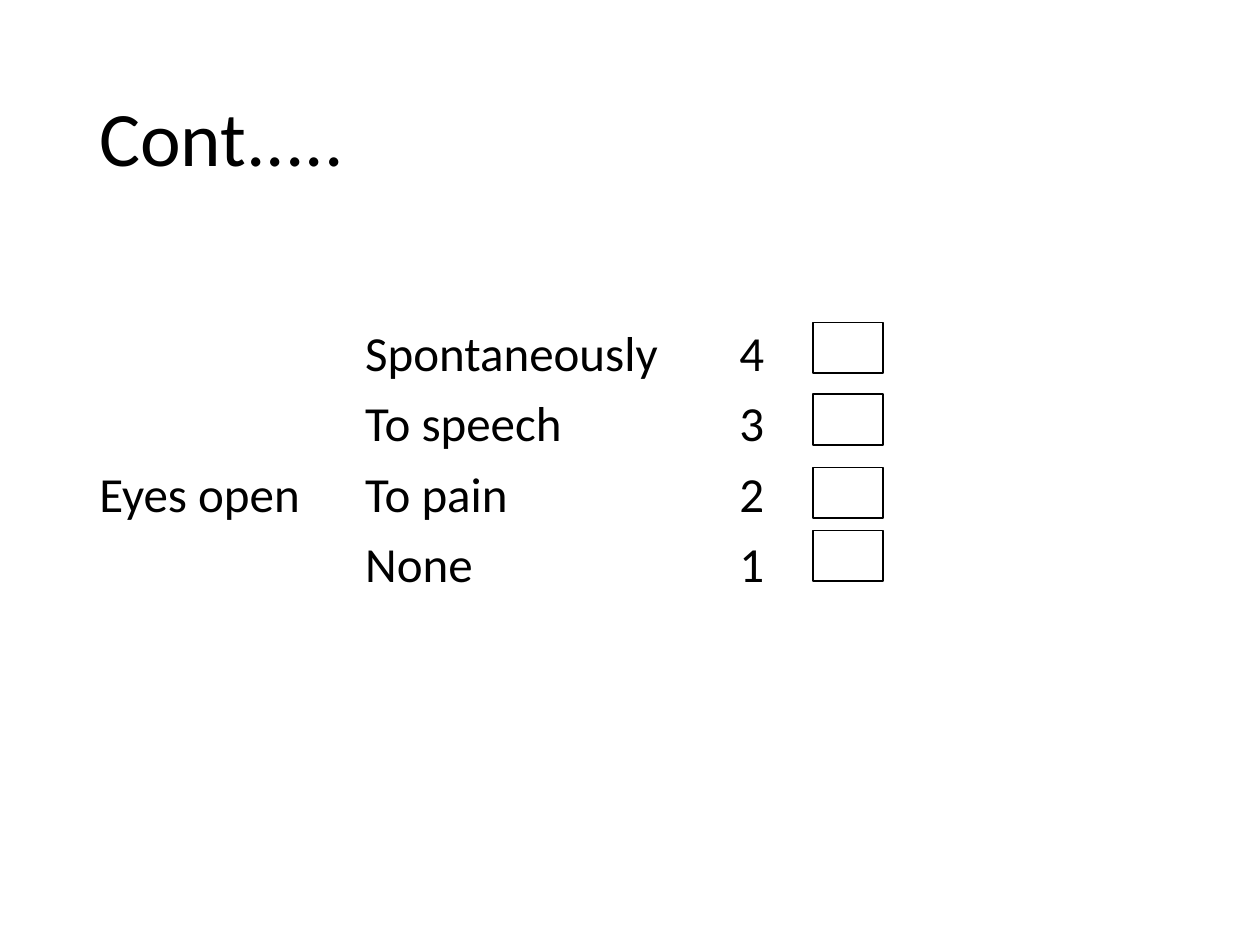
from lxml.etree import SubElement
from pptx import Presentation
from pptx.dml.color import RGBColor
from pptx.enum.shapes import MSO_SHAPE
from pptx.enum.text import MSO_ANCHOR
from pptx.oxml.ns import qn
from pptx.util import Inches, Pt


def color(value):
    return RGBColor.from_string(value)


def add_text(page, top, height, lines, size, frame_format, paragraph_format):
    box = page.shapes.add_textbox(Inches(0.69), Inches(top), Inches(8.62), Inches(height))
    frame = box.text_frame
    for name, value in frame_format.items():
        setattr(frame, name, value)
    for index, line in enumerate(lines):
        para = frame.add_paragraph() if index else frame.paragraphs[0]
        for name, value in paragraph_format.items():
            setattr(para, name, value)
        span = para.add_run()
        span.text = line
        for name, value in {"name": "Calibri", "size": Pt(size)}.items():
            setattr(span.font, name, value)
        span.font.color.rgb = color("000000")
    return box


deck = Presentation()
deck.slide_width = Inches(10)
deck.slide_height = Inches(7.5)
page = deck.slides.add_slide(deck.slide_layouts[6])

add_text(page, 0.4, 1.45, ["Cont....."], 44,
         {"word_wrap": True, "vertical_anchor": MSO_ANCHOR.MIDDLE},
         {"line_spacing": 0.9})

scores = [
    ("", "Spontaneously", "4"),
    ("", "To speech", "3"),
    ("Eyes open", "To pain", "2"),
    ("", "None", "1"),
]
scale = add_text(page, 2, 4.76, ["\t".join(score) for score in scores], 28,
                 {"word_wrap": True, "margin_top": Inches(0.61)},
                 {"line_spacing": 0.9, "space_before": Pt(10)})
for para in scale.text_frame.paragraphs:
    tabs = SubElement(para._p.get_or_add_pPr(), qn("a:tabLst"))
    for position in (2.11, 5.08):
        SubElement(tabs, qn("a:tab"), pos=str(Inches(position)), algn="l")

for top in (2.56, 3.13, 3.71, 4.21):
    checkbox = page.shapes.add_shape(
        MSO_SHAPE.RECTANGLE, Inches(6.45), Inches(top), Inches(0.56), Inches(0.4))
    checkbox.shadow.inherit = False
    checkbox.fill.solid()
    checkbox.fill.fore_color.rgb = color("FFFFFF")
    checkbox.line.color.rgb = color("000000")
    checkbox.line.width = Pt(1)

deck.save("out.pptx")
